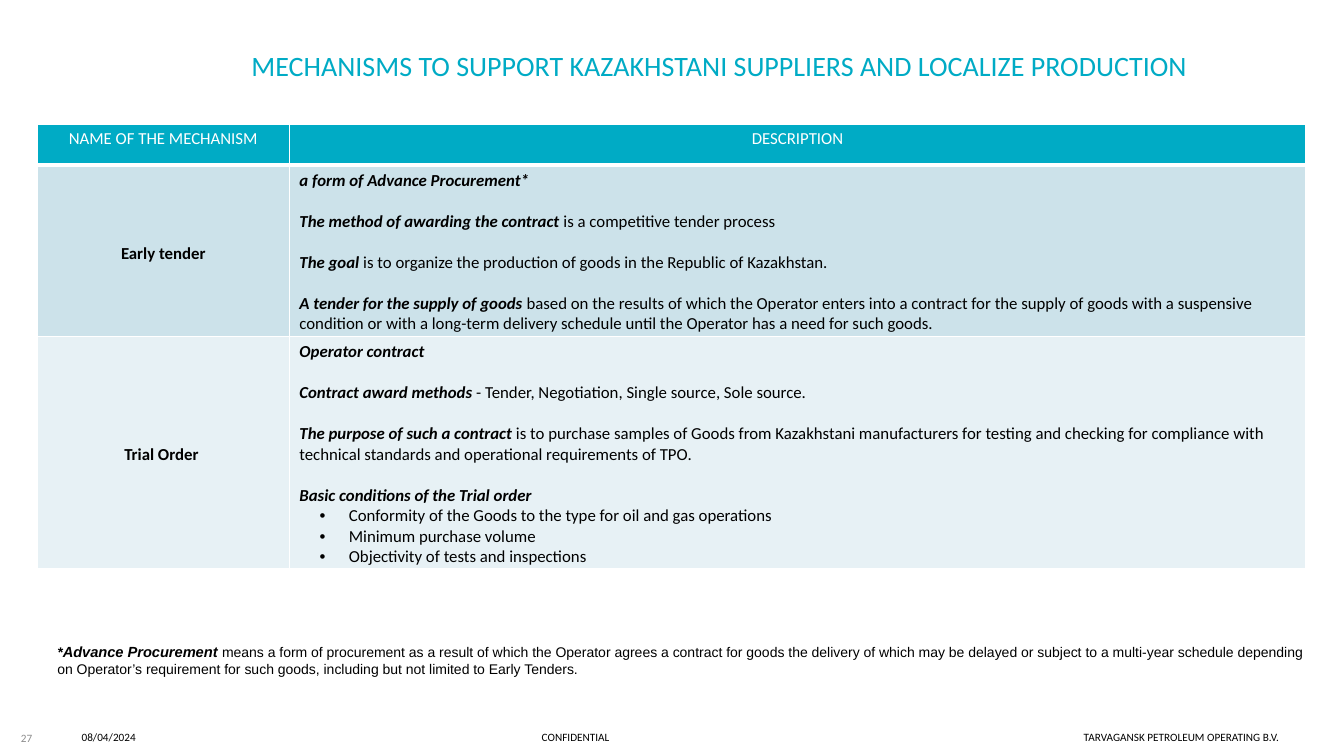
from lxml import etree
from pptx import Presentation
from pptx.dml.color import RGBColor
from pptx.enum import text as t
from pptx.oxml import ns
from pptx.util import Inches, Pt

TEAL = RGBColor(0x00, 0xAB, 0xC5)
SKY = RGBColor(0xCC, 0xE2, 0xEA)
PALE = RGBColor(0xE7, 0xF1, 0xF5)
GREY = RGBColor(0x8C, 0x8C, 0x8C)
WHITE = RGBColor(0xFF, 0xFF, 0xFF)
BLACK = RGBColor(0, 0, 0)

MID = t.MSO_ANCHOR.MIDDLE
TOP = t.MSO_ANCHOR.TOP
CENTER = t.PP_ALIGN.CENTER
LEFT = t.PP_ALIGN.LEFT
GAP = 14.65

TITLE = "MECHANISMS TO SUPPORT KAZAKHSTANI SUPPLIERS AND LOCALIZE PRODUCTION"
HEADS = ["NAME OF THE MECHANISM", "DESCRIPTION"]
ROWS = [
    ("Early tender", SKY, [
        ("a form of Advance Procurement*", ""),
        ("The method of awarding the contract ", "is a competitive tender process"),
        ("The goal ", "is to organize the production of goods in the Republic of Kazakhstan."),
        ("A tender for the supply of goods ",
         "based on the results of which the Operator enters into a contract for the "
         "supply of goods with a suspensive condition or with a long-term delivery "
         "schedule until the Operator has a need for such goods."),
    ], []),
    ("Trial Order ", PALE, [
        ("Operator contract", ""),
        ("Contract award methods ", "- Tender, Negotiation, Single source, Sole source."),
        ("The purpose of such a contract ",
         "is to purchase samples of Goods from Kazakhstani manufacturers for testing "
         "and checking for compliance with technical standards and operational "
         "requirements of TPO."),
        ("Basic conditions of the Trial order", ""),
    ], [
        "Conformity of the Goods to the type for oil and gas operations",
        "Minimum purchase volume",
        "Objectivity of tests and inspections",
    ]),
]
NOTE = ("means a form of procurement as a result of which the Operator agrees a contract "
        "for goods the delivery of which may be delayed or subject to a multi-year schedule "
        "depending on Operator’s requirement for such goods, including but not limited to "
        "Early Tenders.")
FOOTER = "08/04/2024\tCONFIDENTIAL\tTARVAGANSK PETROLEUM OPERATING B.V."


def add_run(para, words, size, color=BLACK, bold=False, slant=False, face="Calibri"):
    run = para.add_run()
    run.text = words
    font = run.font
    font.name, font.size = face, Pt(size)
    font.bold, font.italic = bold, slant
    font.color.rgb = color


def place(shape, left, top, width, height):
    shape.left, shape.top = Inches(left), Inches(top)
    shape.width, shape.height = Inches(width), Inches(height)


def add_box(slide, left, top, width, height, anchor=TOP):
    box = slide.shapes.add_textbox(
        Inches(left), Inches(top), Inches(width), Inches(height))
    frame = box.text_frame
    frame.word_wrap = True
    frame.vertical_anchor = anchor
    return frame


def add_tabs(para, stops):
    tabs = etree.SubElement(para._p.get_or_add_pPr(), ns.qn("a:tabLst"))
    for pos, kind in stops:
        etree.SubElement(tabs, ns.qn("a:tab"), pos=str(Inches(pos)), algn=kind)


def add_bullet(para):
    props = para._p.get_or_add_pPr()
    props.set("marL", str(Inches(0.49)))
    props.set("indent", str(Inches(-0.29)))
    etree.SubElement(props, ns.qn("a:buFont"), typeface="Arial")
    etree.SubElement(props, ns.qn("a:buChar"), char="•")


def add_edges(cell, base):
    props = cell._tc.get_or_add_tcPr()
    widths = {"lnL": 1, "lnR": 1, "lnT": 1, "lnB": base}
    for spot, (name, width) in enumerate(widths.items()):
        line = etree.Element(ns.qn("a:" + name), w=str(Pt(width)))
        fill = etree.SubElement(line, ns.qn("a:solidFill"))
        etree.SubElement(fill, ns.qn("a:srgbClr"), val=str(WHITE))
        props.insert(spot, line)


def style_cell(cell, fill, anchor=TOP, align=LEFT, base=1):
    cell.fill.solid()
    cell.fill.fore_color.rgb = fill
    add_edges(cell, base)
    cell.vertical_anchor = anchor
    cell.margin_bottom = 0
    para = cell.text_frame.paragraphs[0]
    para.alignment = align
    return para


def fill_detail(cell, fill, points, items):
    para = style_cell(cell, fill)
    for spot, (lead, rest) in enumerate(points):
        if spot:
            para = cell.text_frame.add_paragraph()
            para.space_before = Pt(GAP)
        add_run(para, lead, 12, bold=True, slant=True)
        if rest:
            add_run(para, rest, 12)
    for item in items:
        para = cell.text_frame.add_paragraph()
        add_bullet(para)
        add_run(para, item, 12)


def add_grid(slide):
    grid = slide.shapes.add_table(
        len(ROWS) + 1, 2, Inches(0.37), Inches(1.23), Inches(12.58), Inches(4.41)).table
    for col, width in zip(grid.columns, (2.5, 10.08)):
        col.width = Inches(width)
    for row, height in zip(grid.rows, (0.41, 1.7, 2.3)):
        row.height = Inches(height)
    for col, head in enumerate(HEADS):
        para = style_cell(grid.cell(0, col), TEAL, align=CENTER, base=3)
        add_run(para, head, 12, WHITE)
    for row, (name, fill, points, items) in enumerate(ROWS, 1):
        para = style_cell(grid.cell(row, 0), fill, MID, CENTER)
        add_run(para, name, 12, bold=True)
        fill_detail(grid.cell(row, 1), fill, points, items)


def add_title(slide):
    title = slide.shapes.title
    place(title, 0.47, 0.43, 13.33, 0.44)
    title.text_frame.vertical_anchor = MID
    para = title.text_frame.paragraphs[0]
    para.alignment = CENTER
    add_run(para, TITLE, 20, TEAL)


def add_note(slide):
    para = add_box(slide, 0.47, 6.33, 12.59, 0.45).paragraphs[0]
    add_run(para, "*", 10, bold=True, slant=True, face="Arial")
    add_run(para, "Advance Procurement ", 10.5, bold=True, slant=True, face="Arial")
    add_run(para, NOTE, 10, face="Arial")


def add_footer(slide):
    para = add_box(slide, 0.11, 7.14, 0.35, 0.36, MID).paragraphs[0]
    add_run(para, "27", 8, GREY)
    frame = add_box(slide, 0.11, 7.2, 13.1, 0.3)
    frame.margin_left = Inches(0.7)
    para = frame.paragraphs[0]
    add_tabs(para, [(4.9, "ctr"), (11.88, "r")])
    add_run(para, FOOTER, 8)


def main():
    deck = Presentation()
    deck.slide_width, deck.slide_height = Inches(13.33), Inches(7.5)
    slide = deck.slides.add_slide(deck.slide_layouts[5])
    add_title(slide)
    add_grid(slide)
    add_note(slide)
    add_footer(slide)
    deck.save("out.pptx")


if __name__ == "__main__":
    main()
